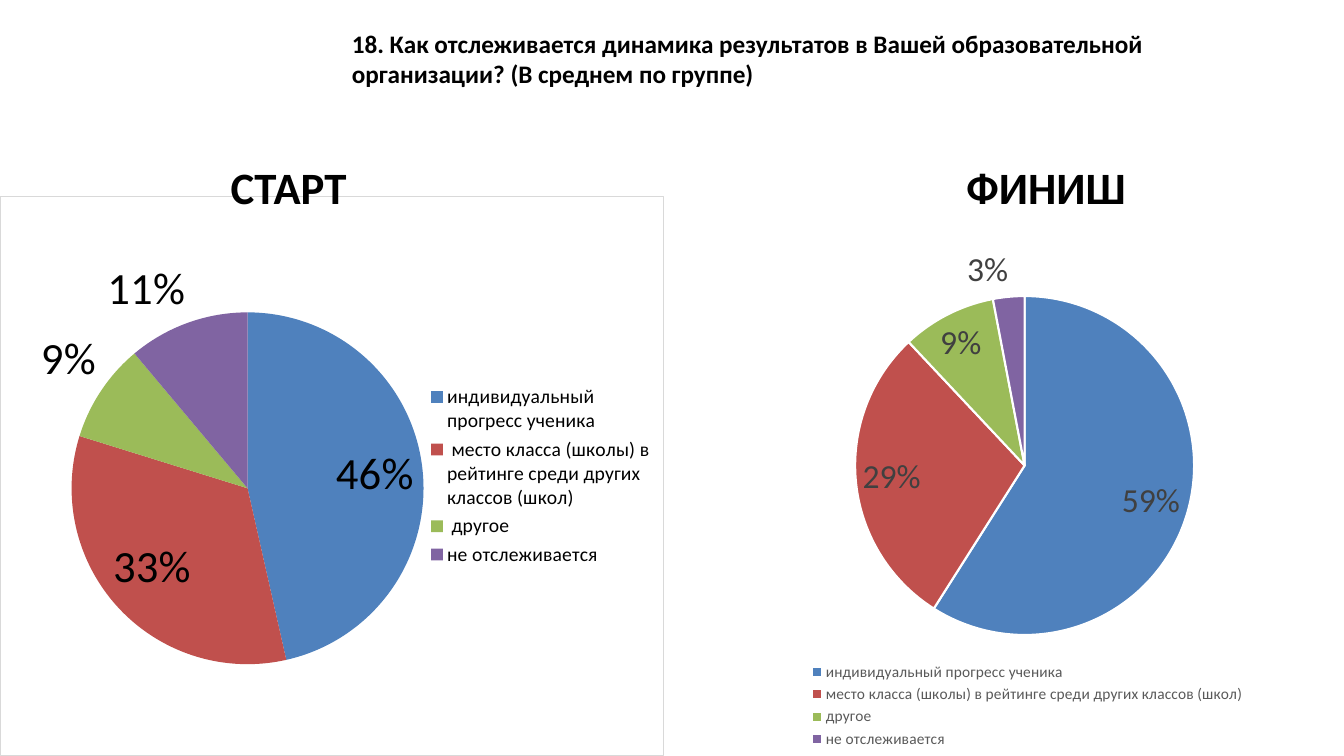
from dataclasses import dataclass
from typing import Optional

import lxml.etree
import pptx
import pptx.chart.data
import pptx.dml.color
import pptx.enum.chart
import pptx.enum.text
import pptx.oxml
import pptx.oxml.ns
import pptx.util

Pt = pptx.util.Pt
Box = tuple[float, float, float, float]

HUES = {
    "blue": "4F81BD",
    "red": "C0504D",
    "green": "9BBB59",
    "plum": "8064A2",
    "black": "000000",
    "white": "FFFFFF",
    "frame": "D9D9D9",
    "label": "404040",
    "legend": "595959",
}
SLICES = ("blue", "red", "green", "plum")
FONT = "Calibri"


@dataclass
class Head:
    text: str
    box: Box


@dataclass
class Pie:
    box: Box
    names: tuple[str, ...]
    shares: tuple[int, ...]
    side: pptx.enum.chart.XL_LEGEND_POSITION
    plot: Box
    key: Box
    key_size: float
    key_hue: str
    mark_size: float
    mark_hue: str
    frame: Optional[str]
    edge: Optional[str]


HEADS = (
    Head("СТАРТ", (157.7, 110.9, 129.6, 45.4)),
    Head("ФИНИШ", (683.3, 110.9, 165.6, 45.4)),
)
PIES = (
    Pie(
        (0, 139.7, 474.5, 400.3),
        (
            "индивидуальный прогресс ученика",
            " место класса (школы) в рейтинге среди других классов (школ)",
            " другое",
            "не отслеживается",
        ),
        (46, 33, 9, 11),
        pptx.enum.chart.XL_LEGEND_POSITION.RIGHT,
        (0.107, 0.208, 0.531, 0.629),
        (0.66, 0.33, 0.33, 0.34),
        14, "black", 32, "black", "frame", None,
    ),
    Pie(
        (502.6, 167.8, 458.6, 369.4),
        (
            "индивидуальный прогресс ученика",
            "место класса (школы) в рейтинге среди других классов (школ)",
            "другое",
            "не отслеживается",
        ),
        (59, 29, 9, 3),
        pptx.enum.chart.XL_LEGEND_POSITION.BOTTOM,
        (0.236, 0.118, 0.528, 0.656),
        (0.16, 0.82, 0.69, 0.18),
        11, "legend", 24, "label", None, "white",
    ),
)


def shade(name: str) -> pptx.dml.color.RGBColor:
    return pptx.dml.color.RGBColor.from_string(HUES[name])


def style(font, size: float, hue: str, bold: bool = False) -> None:
    font.name = FONT
    font.size = Pt(size)
    font.bold = bold
    font.color.rgb = shade(hue)


def write(shape, text: str, size: float, wrap: bool) -> None:
    frame = shape.text_frame
    frame.word_wrap = wrap
    frame.auto_size = pptx.enum.text.MSO_AUTO_SIZE.SHAPE_TO_FIT_TEXT
    frame.vertical_anchor = pptx.enum.text.MSO_ANCHOR.TOP
    line = frame.paragraphs[0]
    line.alignment = pptx.enum.text.PP_ALIGN.LEFT
    run = line.add_run()
    run.text = text
    style(run.font, size, "black", True)


def place(shape, box: Box) -> None:
    shape.left, shape.top, shape.width, shape.height = map(Pt, box)


def layout(box: Box, inner: bool) -> lxml.etree._Element:
    target = '<c:layoutTarget val="inner"/>' if inner else ""
    modes = '<c:xMode val="edge"/><c:yMode val="edge"/>'
    sizes = "".join(f'<c:{side} val="{size}"/>' for side, size in zip("xywh", box))
    return pptx.oxml.parse_xml(
        f'<c:layout {pptx.oxml.ns.nsdecls("c")}><c:manualLayout>'
        f"{target}{modes}{sizes}</c:manualLayout></c:layout>"
    )


def border(hue: Optional[str]) -> lxml.etree._Element:
    fill = f'<a:solidFill><a:srgbClr val="{HUES[hue]}"/></a:solidFill>' if hue else "<a:noFill/>"
    return pptx.oxml.parse_xml(
        f'<c:spPr {pptx.oxml.ns.nsdecls("c", "a")}><a:noFill/>'
        f'<a:ln w="{Pt(0.75)}">{fill}</a:ln></c:spPr>'
    )


def arrange(root, pie: Pie) -> None:
    for old in root.xpath("c:chart/c:plotArea/c:layout | c:chart/c:legend/c:layout"):
        old.getparent().remove(old)
    root.xpath("c:chart/c:plotArea")[0].insert(0, layout(pie.plot, True))
    root.xpath("c:chart/c:legend/c:legendPos")[0].addnext(layout(pie.key, False))
    root.xpath("c:chart")[0].addnext(border(pie.frame))


def draw_pie(slide, pie: Pie) -> None:
    data = pptx.chart.data.CategoryChartData()
    data.categories = pie.names
    data.add_series("Series 1", pie.shares)
    kind = pptx.enum.chart.XL_CHART_TYPE.PIE
    chart = slide.shapes.add_chart(kind, *map(Pt, pie.box), data).chart
    chart.has_title = False
    style(chart.font, 10, "black")
    chart.font.name = "Arial"

    chart.has_legend = True
    chart.legend.position = pie.side
    chart.legend.include_in_layout = False
    style(chart.legend.font, pie.key_size, pie.key_hue)

    plot = chart.plots[0]
    plot.vary_by_categories = True
    for place_no, hue in enumerate(SLICES):
        look = plot.series[0].points[place_no].format
        look.fill.solid()
        look.fill.fore_color.rgb = shade(hue)
        if pie.edge:
            look.line.color.rgb = shade(pie.edge)
            look.line.width = Pt(1.5)
        else:
            look.line.fill.background()

    plot.has_data_labels = True
    marks = plot.data_labels
    marks.show_percentage = True
    marks.show_value = False
    marks.number_format = "0%"
    marks.number_format_is_linked = False
    marks.position = pptx.enum.chart.XL_LABEL_POSITION.BEST_FIT
    style(marks.font, pie.mark_size, pie.mark_hue)
    arrange(chart.element if hasattr(chart, "element") else chart._chartSpace, pie)


def main() -> None:
    deck = pptx.Presentation()
    deck.slide_width, deck.slide_height = Pt(960), Pt(540)
    slide = deck.slides.add_slide(deck.slide_layouts[5])
    title = slide.shapes.title
    place(title, (244.1, 16.6, 646.6, 72))
    write(
        title,
        "18. Как отслеживается динамика результатов в Вашей образовательной "
        "организации? (В среднем по группе)",
        18,
        True,
    )
    draw_pie(slide, PIES[0])
    for head in HEADS:
        write(slide.shapes.add_textbox(*map(Pt, head.box)), head.text, 32, False)
    draw_pie(slide, PIES[1])
    deck.save("out.pptx")


if __name__ == "__main__":
    main()
